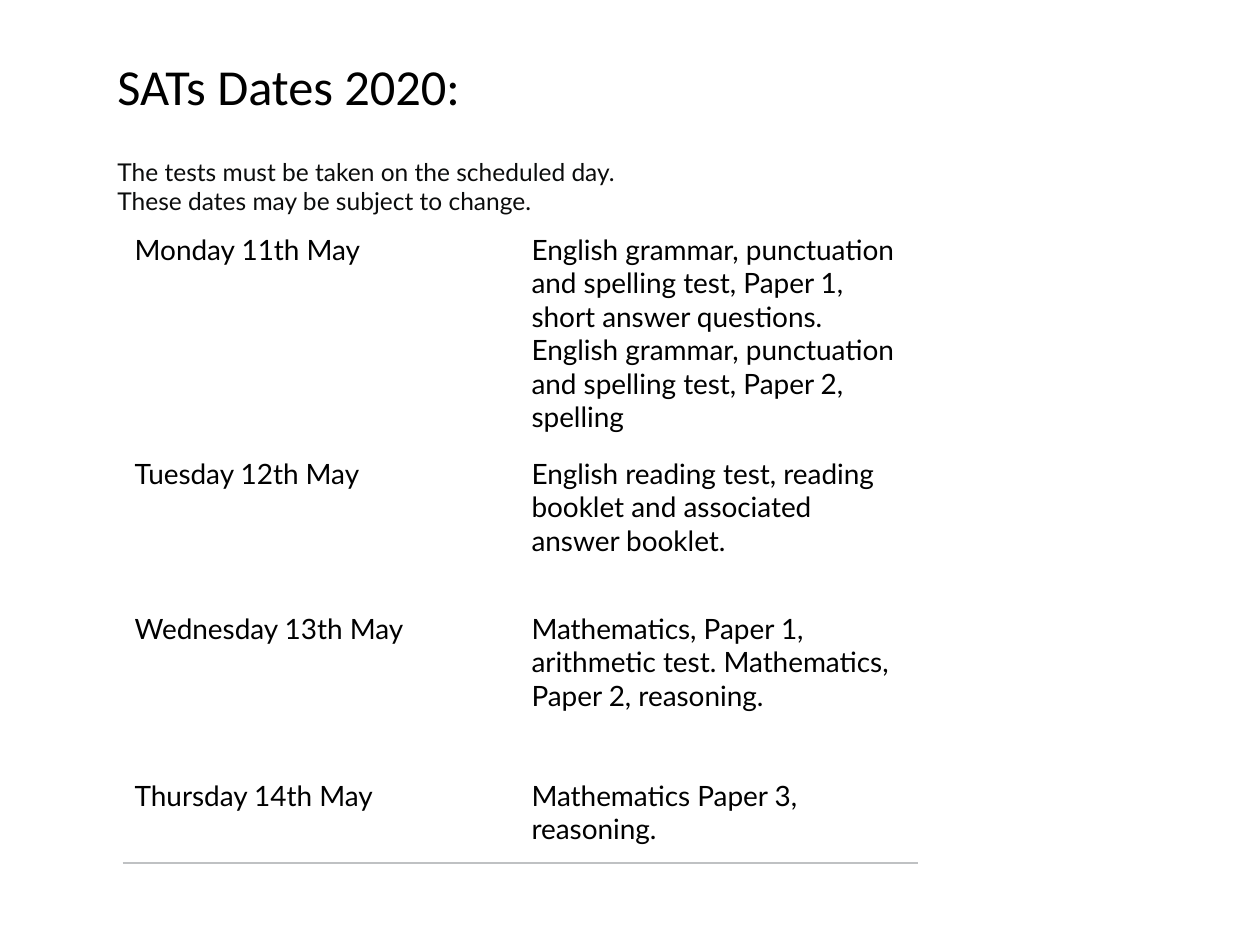
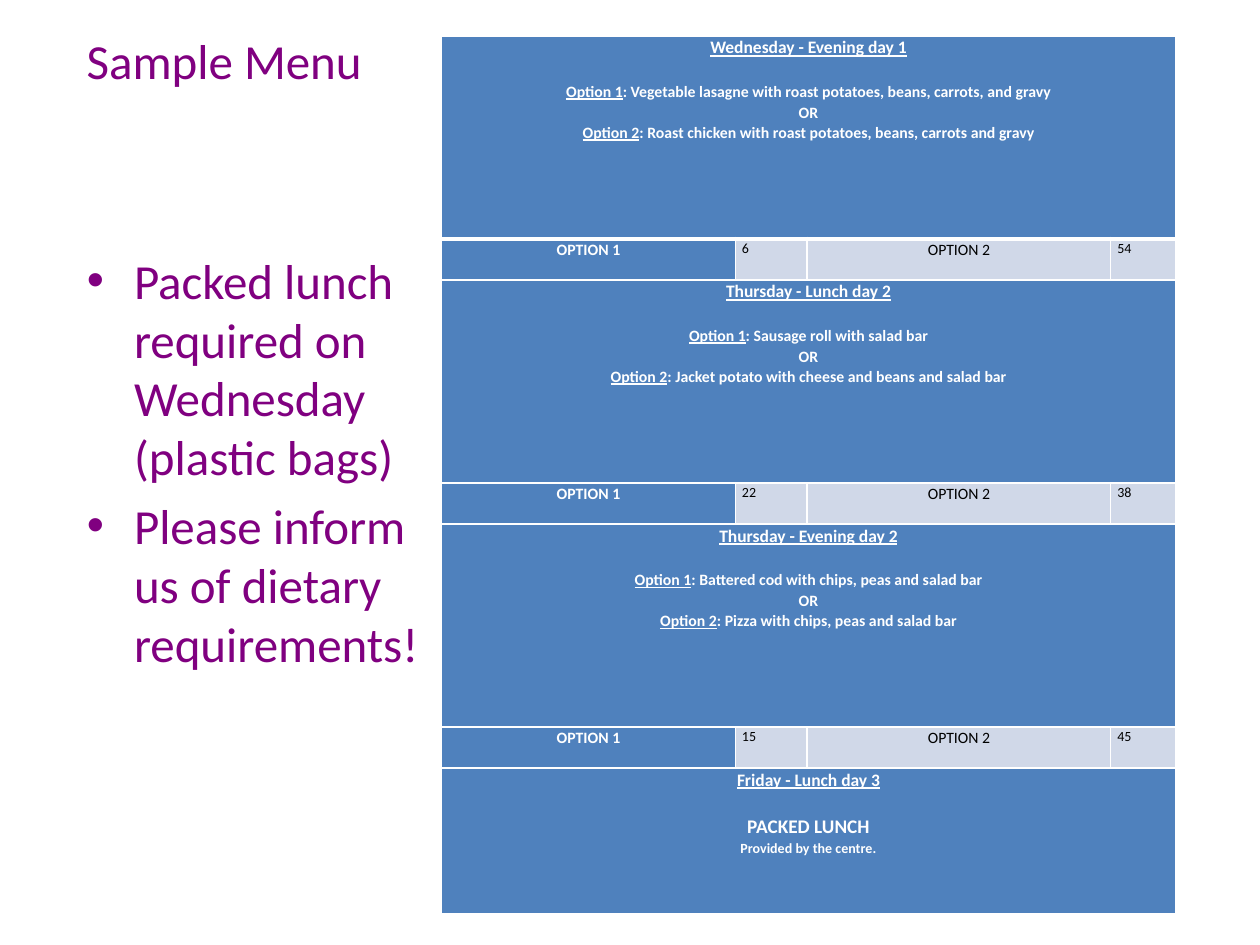
from lxml import etree
from pptx import Presentation
from pptx import util as u
from pptx.dml.color import RGBColor
from pptx.enum import text
from pptx.oxml import ns

Pt = u.Pt
COLORS = {
    "black": "000000", "ink": "0B0C0C", "white": "FFFFFF", "rule": "BFC1C3",
    "purple": "800080", "blue": "4F81BD", "pale": "D0D8E8",
}
HEAD_FONT, BODY_FONT = "Calibri", "Lato"
CENTER, LEFT = text.PP_ALIGN.CENTER, text.PP_ALIGN.LEFT

SAT_DATES = [
    ("Monday 11th May", "English grammar, punctuation and spelling test, Paper 1, "
     "short answer questions. English grammar, punctuation and spelling test, "
     "Paper 2, spelling", 127.5),
    ("Tuesday 12th May", "English reading test, reading booklet and associated "
     "answer booklet.", 88.5),
    ("Wednesday 13th May", "Mathematics, Paper 1, arithmetic test. Mathematics, "
     "Paper 2, reasoning.", 95.5),
    ("Thursday 14th May", "Mathematics Paper 3, reasoning.", 54.5),
]
MEALS = [
    ("Wednesday - Evening day 1",
     "Vegetable lasagne with roast potatoes, beans, carrots, and gravy",
     "Roast chicken with roast potatoes, beans, carrots and gravy", 6, 54),
    ("Thursday - Lunch day 2", "Sausage roll with salad bar",
     "Jacket potato with cheese and beans and salad bar", 22, 38),
    ("Thursday - Evening day 2", "Battered cod with chips, peas and salad bar",
     "Pizza with chips, peas and salad bar", 15, 45),
]
REMINDERS = ["Packed lunch required on Wednesday (plastic bags)",
             "Please inform us of dietary requirements!"]


def add_run(p, words, size, color, font=HEAD_FONT, bold=False, underline=False):
    """Add one formatted run to a paragraph."""
    r = p.add_run()
    r.text = words
    r.font.name, r.font.size = font, Pt(size)
    r.font.bold, r.font.underline = bold, underline
    r.font.color.rgb = RGBColor.from_string(COLORS[color])


def next_paragraph(tf):
    """Return the empty first paragraph of a frame, or a new one."""
    p = tf.paragraphs[0]
    return tf.add_paragraph() if p.runs else p


def add_box(s, box, anchor=text.MSO_ANCHOR.TOP):
    """Add a wrapping text box and return its text frame."""
    tf = s.shapes.add_textbox(*map(Pt, box)).text_frame
    tf.word_wrap, tf.vertical_anchor = True, anchor
    return tf


def add_title(s, box, words, size, color):
    """Add a slide title centred vertically in its box."""
    tf = add_box(s, box, text.MSO_ANCHOR.MIDDLE)
    add_run(tf.paragraphs[0], words, size, color)


def add_plain_table(s, origin, widths, heights):
    """Add a table without banding and return it."""
    box = (*origin, sum(widths), sum(heights))
    table = s.shapes.add_table(len(heights), len(widths), *map(Pt, box)).table
    table.first_row = table.horz_banding = False
    for column, width in zip(table.columns, widths):
        column.width = Pt(width)
    for row, height in zip(table.rows, heights):
        row.height = Pt(height)
    return table


def style_cell(cell, fill, margins, borders):
    """Set a cell's margins, its borders as side: (colour, width), and its fill."""
    cell.margin_left = cell.margin_right = Pt(margins[0])
    cell.margin_top = cell.margin_bottom = Pt(margins[1])
    tc_pr = cell._tc.get_or_add_tcPr()
    for side, (color, width) in borders.items():
        ln = etree.SubElement(tc_pr, ns.qn(f"a:ln{side}"), w=str(Pt(width)))
        solid = etree.SubElement(ln, ns.qn("a:solidFill"))
        etree.SubElement(solid, ns.qn("a:srgbClr"), val=COLORS[color])
    cell.fill.solid()
    cell.fill.fore_color.rgb = RGBColor.from_string(COLORS[fill])


def add_dates_note(s, box):
    """Add the two lines above the dates table."""
    tf = add_box(s, box, text.MSO_ANCHOR.MIDDLE)
    for line in ("The tests must be taken on the scheduled day.",
                 "These dates may be subject to change."):
        add_run(next_paragraph(tf), line, 14, "ink", BODY_FONT)


def add_dates_table(s, origin, width):
    """Add the test dates with a rule under each row."""
    table = add_plain_table(s, origin, [width / 2] * 2, [row[2] for row in SAT_DATES])
    for i, row in enumerate(SAT_DATES):
        for j, words in enumerate(row[:2]):
            cell = table.cell(i, j)
            style_cell(cell, "white", (6.5, 6.5), {"B": ("rule", 0.75)})
            add_run(cell.text_frame.paragraphs[0], words, 16, "black", BODY_FONT)


def add_reminders(s, box):
    """Add the bulleted reminders."""
    tf = add_box(s, box)
    for i, words in enumerate(REMINDERS):
        p = next_paragraph(tf)
        p_pr = p._p.get_or_add_pPr()
        p_pr.set("marL", str(Pt(27)))
        p_pr.set("indent", str(Pt(-27)))
        etree.SubElement(p_pr, ns.qn("a:buFont"), typeface="Arial")
        etree.SubElement(p_pr, ns.qn("a:buChar"), char="•")
        if i:
            p.space_before = Pt(5.6)
        add_run(p, words, 28, "purple")


def add_menu_line(cell, *runs, size=9, color="white", bold=True, align=CENTER):
    """Add a menu paragraph from (words, underlined) runs."""
    p = next_paragraph(cell.text_frame)
    p.alignment, p.line_spacing = align, 1.07
    for words, underline in runs:
        add_run(p, words, size, color, bold=bold, underline=underline)
    return p


def menu_cell(table, i, j, fill, bottom=1):
    """Style one menu cell with white borders and return it."""
    cell = table.cell(i, j)
    borders = {side: ("white", 1) for side in "LRT"}
    style_cell(cell, fill, (3.75, 0), {**borders, "B": ("white", bottom)})
    return cell


def add_meal_heading(table, i, heading, bottom=1):
    """Merge a row into one blue cell with an underlined heading."""
    table.cell(i, 0).merge(table.cell(i, 3))
    cell = menu_cell(table, i, 0, "blue", bottom)
    add_menu_line(cell, (heading, True), size=10).space_after = Pt(13)
    return cell


def add_meal_counts(table, i, counts):
    """Fill a row with the number of orders for each option."""
    for n, count in enumerate(counts):
        first = n == 0
        label = menu_cell(table, i, 2 * n, "blue" if first else "pale")
        add_menu_line(label, (f"OPTION {n + 1}", False), bold=first,
                      color="white" if first else "black")
        number = menu_cell(table, i, 2 * n + 1, "pale")
        add_menu_line(number, (str(count), False), size=8, color="black",
                      bold=False, align=LEFT)


def add_menu_table(s, origin):
    """Add the meals, their order counts and the closing packed lunch."""
    heights = [116, 23.5] * len(MEALS) + [83]
    table = add_plain_table(s, origin, [168, 41, 173.5, 37], heights)
    for n, (heading, option1, option2, *counts) in enumerate(MEALS):
        cell = add_meal_heading(table, 2 * n, heading, 1 if n else 3)
        add_menu_line(cell, ("Option 1", True), (f": {option1}", False))
        add_menu_line(cell, ("OR", False))
        add_menu_line(cell, ("Option 2", True), (f": {option2}", False))
        add_meal_counts(table, 2 * n + 1, counts)
    cell = add_meal_heading(table, 2 * len(MEALS), "Friday - Lunch day 3")
    add_menu_line(cell, ("PACKED LUNCH", False), size=11)
    add_menu_line(cell, ("Provided by the centre.", False), size=8)


def build_dates_slide(s):
    """Lay out the test dates slide."""
    add_title(s, (60, 21, 215, 56), "SATs Dates 2020:", 28.8, "black")
    add_dates_table(s, (70.5, 126.5), 453.5)
    add_dates_note(s, (60, 88.5, 650, 36))


def build_menu_slide(s):
    """Lay out the sample menu slide."""
    add_title(s, (42.5, -19.5, 648, 108), "Sample Menu", 28, "purple")
    add_reminders(s, (42.5, 139.5, 204, 384))
    add_menu_table(s, (252.25, 20.5))


def main():
    """Build and save the presentation."""
    prs = Presentation()
    prs.slide_width, prs.slide_height = Pt(720), Pt(540)
    for build in (build_dates_slide, build_menu_slide):
        build(prs.slides.add_slide(prs.slide_layouts[6]))
    prs.save("out.pptx")


if __name__ == "__main__":
    main()
